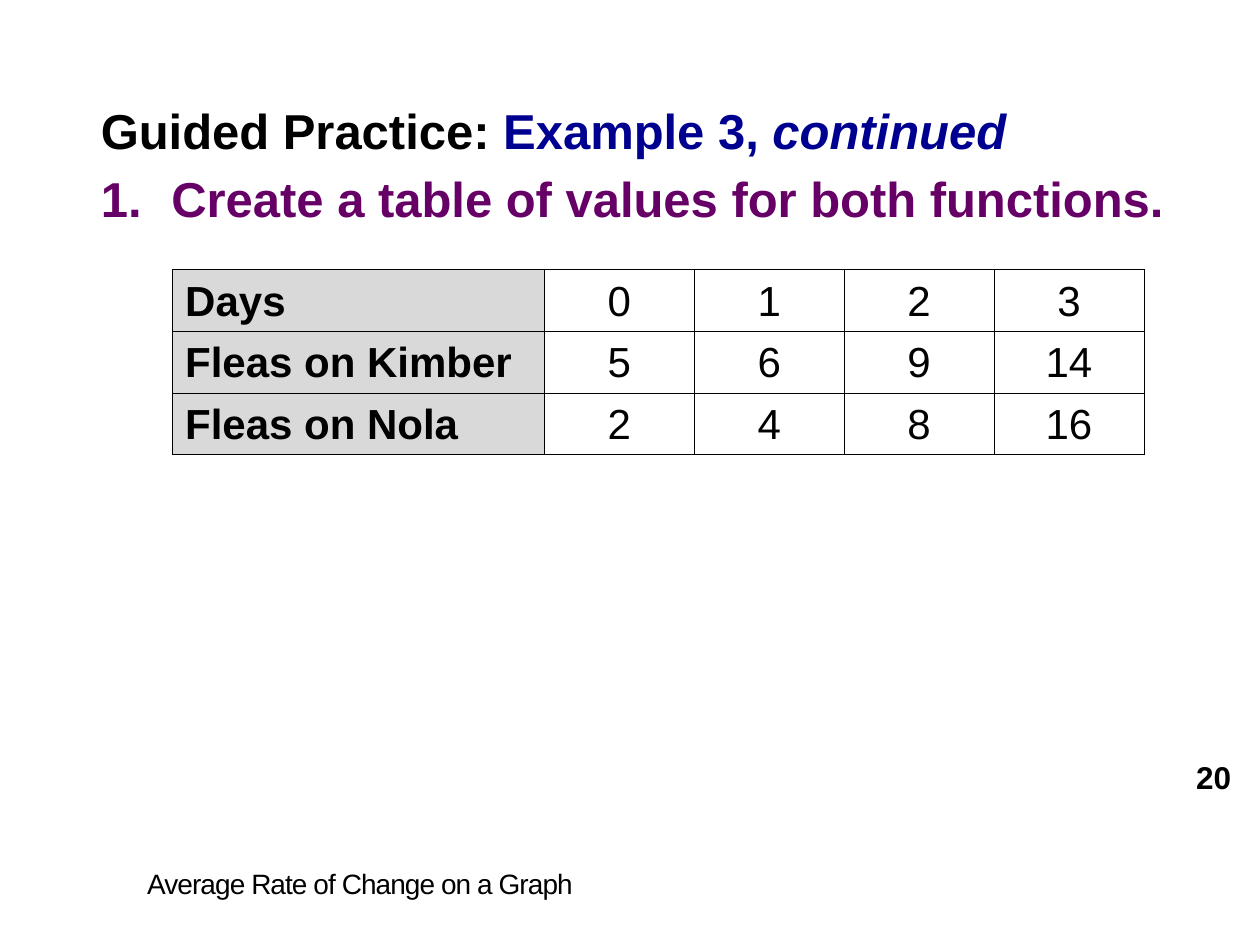
import pptx
import pptx.util
import pptx.dml.color
import pptx.enum.text
import pptx.oxml
import pptx.oxml.ns

Inches, Pt = pptx.util.Inches, pptx.util.Pt
PP_ALIGN = pptx.enum.text.PP_ALIGN
ANCHOR = pptx.enum.text.MSO_ANCHOR
COLORS = {"text": "000000", "example": "000090", "step": "660066",
          "label": "D9D9D9", "value": "FFFFFF"}
NS = pptx.oxml.ns.nsdecls("a")


def style(font, size, color, bold=False):
    font.name = "Arial"
    font.size = Pt(size)
    font.bold = bold
    font.color.rgb = pptx.dml.color.RGBColor.from_string(COLORS[color])


def place(part, left, top, width, height, anchor=ANCHOR.TOP):
    part.left, part.top = Inches(left), Inches(top)
    part.width, part.height = Inches(width), Inches(height)
    frame = part.text_frame
    frame.word_wrap = True
    frame.auto_size = pptx.enum.text.MSO_AUTO_SIZE.NONE
    frame.vertical_anchor = anchor
    paragraph = frame.paragraphs[0]
    paragraph.alignment = PP_ALIGN.LEFT
    paragraph.space_before = Pt(0)
    return paragraph


deck = pptx.Presentation()
deck.slide_width, deck.slide_height = Inches(10), Inches(7.5)
slide = deck.slides.add_slide(deck.slide_layouts[1])

heading = place(slide.shapes.title, 0.7, 0.75, 8.79, 0.55)
style(heading.font, 28, "text", True)
for words, color, italic in [("Guided Practice: ", "text", False),
                             ("Example 3, ", "example", False),
                             ("continued", "example", True)]:
    run = heading.add_run()
    run.text = words
    style(run.font, 28, color, True)
    run.font.italic = italic

step = place(slide.placeholders[1], 0.7, 1.29, 8.79, 4.88)
step.text = "Create a table of values for both functions."
step_properties = step._p.get_or_add_pPr()
step_properties.set("marL", str(Inches(0.56)))
step_properties.set("indent", str(-Inches(0.56)))
step_properties.append(pptx.oxml.parse_xml(f'<a:buFont {NS} typeface="+mj-lt"/>'))
step_properties.append(pptx.oxml.parse_xml(f'<a:buAutoNum {NS} type="arabicPeriod"/>'))
style(step.font, 28, "step", True)
style(step.runs[0].font, 28, "step", True)

fleas = [("Days", 0, 1, 2, 3),
         ("Fleas on Kimber", 5, 6, 9, 14),
         ("Fleas on Nola", 2, 4, 8, 16)]
label_width, value_width, row_height = 2.95, 1.19, 0.49
table = slide.shapes.add_table(
    len(fleas), len(fleas[0]), Inches(1.37), Inches(2.14),
    Inches(label_width + 4 * value_width), Inches(3 * row_height)).table
table.first_row = table.horz_banding = False
for index, column in enumerate(table.columns):
    column.width = Inches(value_width if index else label_width)
for row, entries in enumerate(fleas):
    table.rows[row].height = Inches(row_height)
    for col, entry in enumerate(entries):
        cell = table.cell(row, col)
        cell.text = str(entry)
        cell.vertical_anchor = ANCHOR.BOTTOM
        cell.margin_left = Inches(0.01 if col else 0.1)
        cell.margin_right = Inches(0.01)
        cell.margin_top, cell.margin_bottom = 0, Inches(0.05)
        for side in "LRTB":
            cell._tc.get_or_add_tcPr().append(pptx.oxml.parse_xml(
                f'<a:ln{side} {NS} w="{Pt(0.5)}"><a:solidFill>'
                f'<a:srgbClr val="{COLORS["text"]}"/></a:solidFill></a:ln{side}>'))
        cell.fill.solid()
        cell.fill.fore_color.rgb = pptx.dml.color.RGBColor.from_string(
            COLORS["value" if col else "label"])
        entry_line = cell.text_frame.paragraphs[0]
        entry_line.alignment = PP_ALIGN.CENTER if col else PP_ALIGN.LEFT
        style(entry_line.font, 24, "text", col == 0)

page_number = place(slide.shapes.add_textbox(0, 0, 0, 0), 9.07, 6.01, 0.8, 0.31, ANCHOR.MIDDLE)
page_number.text = "20"
page_number.alignment = PP_ALIGN.RIGHT
style(page_number.font, 18, "text", True)

topic = place(slide.shapes.add_textbox(0, 0, 0, 0), 1.07, 6.83, 6.79, 0.33)
topic.text = "Average Rate of Change on a Graph"
style(topic.font, 16, "text")
topic.runs[0]._r.get_or_add_rPr().set("spc", "-50")

deck.save("out.pptx")
